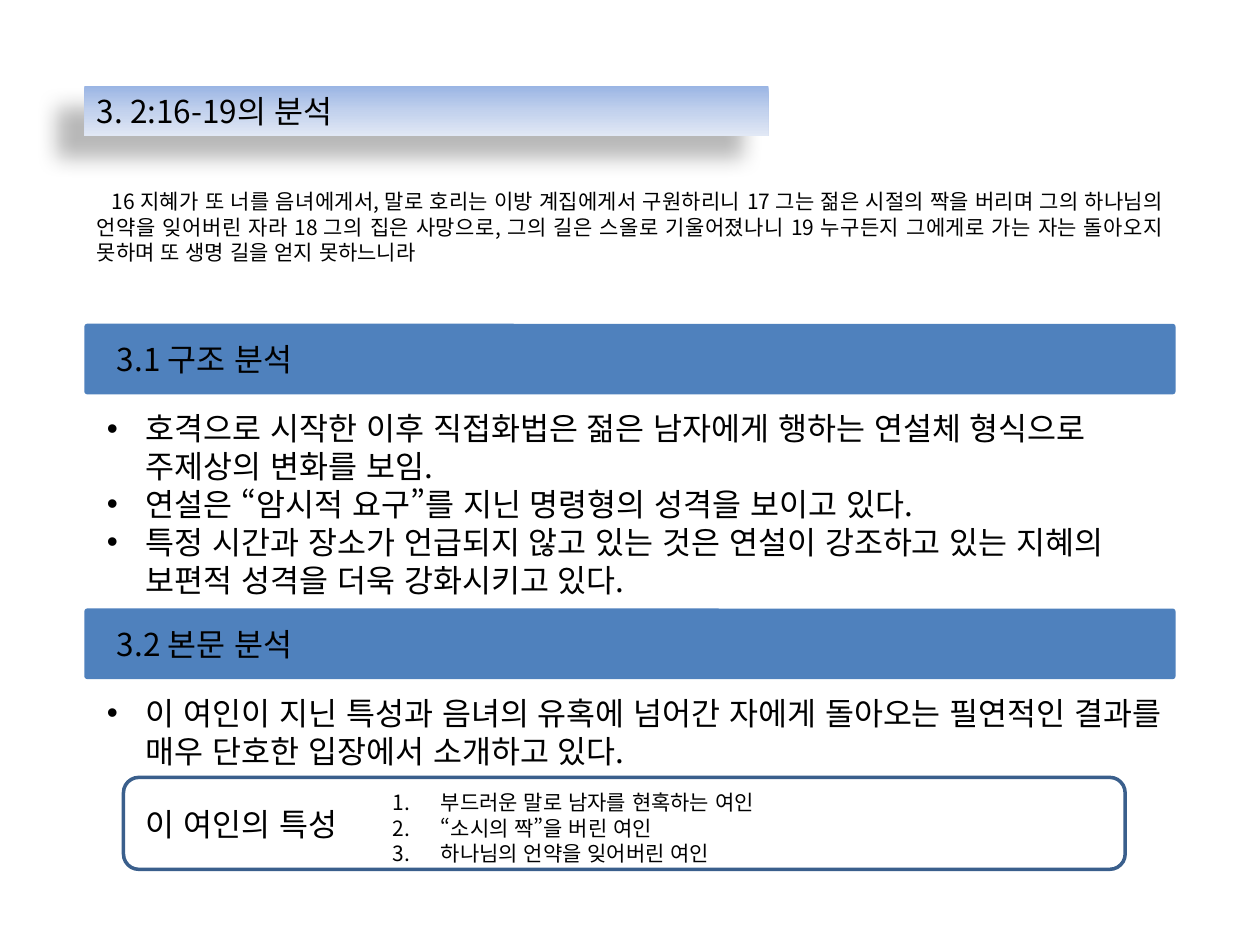
from lxml import etree
from pptx import Presentation
from pptx.dml.color import RGBColor
from pptx.enum.lang import MSO_LANGUAGE_ID
from pptx.enum.shapes import MSO_SHAPE
from pptx.enum.text import MSO_ANCHOR, MSO_AUTO_SIZE, PP_ALIGN
from pptx.oxml import parse_xml
from pptx.oxml.ns import nsdecls, qn
from pptx.util import Inches, Pt

RECT, ROUND = MSO_SHAPE.RECTANGLE, MSO_SHAPE.ROUNDED_RECTANGLE
LEFT, JUSTIFY = PP_ALIGN.LEFT, PP_ALIGN.JUSTIFY
KOREAN = MSO_LANGUAGE_ID.KOREAN
FONT = "Noto Sans CJK KR"
COLORS = {"text": "000000", "bar": "4F81BD", "frame": "3A5F8C"}
TITLE_STOPS = [(0, "9AB5E4"), (50, "C2D1ED"), (100, "E1E8F5")]
BODY, SMALL = 18, 12

TITLE = "3. 2:16-19의 분석"
VERSES = (
    "16 지혜가 또 너를 음녀에게서, 말로 호리는 이방 계집에게서 구원하리니 "
    "17 그는 젊은 시절의 짝을 버리며 그의 하나님의 언약을 잊어버린 자라 "
    "18 그의 집은 사망으로, 그의 길은 스올로 기울어졌나니 "
    "19 누구든지 그에게로 가는 자는 돌아오지 못하며 또 생명 길을 얻지 못하느니라"
)
# top of the bar, height of the text below it, heading, points
SECTIONS = [
    (2.57, 1.62, "3.1 구조 분석", [
        "호격으로 시작한 이후 직접화법은 젊은 남자에게 행하는 연설체 형식으로 주제상의 변화를 보임.",
        "연설은 “암시적 요구”를 지닌 명령형의 성격을 보이고 있다.",
        "특정 시간과 장소가 언급되지 않고 있는 것은 연설이 강조하고 있는 지혜의 보편적 성격을 더욱 강화시키고 있다.",
    ]),
    (4.83, 0.71, "3.2 본문 분석", [
        "이 여인이 지닌 특성과 음녀의 유혹에 넘어간 자에게 돌아오는 필연적인 결과를 매우 단호한 입장에서 소개하고 있다.",
    ]),
]
TRAITS_LABEL = "이 여인의 특성"
TRAITS = ["부드러운 말로 남자를 현혹하는 여인", "“소시의 짝”을 버린 여인", "하나님의 언약을 잊어버린 여인"]

SLIDE_W, SLIDE_H = 10, 7.5
MARGIN = 0.67
CONTENT_W = SLIDE_W - 2 * MARGIN
BAR_H, LINE_H = 0.56, 0.4
BULLET = ("buChar", {"char": "•"})
NUMBER = ("buAutoNum", {"type": "arabicPeriod"})


def write(sp, lines, size=BODY, align=LEFT, marker=None, hang=0.0):
    """Fill a shape with paragraphs, with hanging markers if asked for."""
    tf = sp.text_frame
    tf.word_wrap = True
    tf.auto_size = MSO_AUTO_SIZE.SHAPE_TO_FIT_TEXT
    tf.text = "\n".join(lines)
    for p in tf.paragraphs:
        p.alignment = align
        if marker:
            tag, attrs = marker
            pPr = p._p.get_or_add_pPr()
            pPr.set("marL", str(Inches(hang)))
            pPr.set("indent", str(-Inches(hang)))
            if tag == "buChar":
                etree.SubElement(pPr, qn("a:buFont"), typeface="Arial")
            etree.SubElement(pPr, qn("a:" + tag), **attrs)
        for r in p.runs:
            r.font.size = Pt(size)
            r.font.name = FONT
            r.font.language_id = KOREAN
            r.font.color.rgb = RGBColor.from_string(COLORS["text"])
            etree.SubElement(r._r.get_or_add_rPr(), qn("a:ea"), typeface=FONT)


def add_text(slide, box, lines, **style):
    sp = slide.shapes.add_textbox(*map(Inches, box))
    write(sp, lines, **style)
    return sp


def add_box(slide, kind, box, fill=None, line=None):
    sp = slide.shapes.add_shape(kind, *map(Inches, box))
    sp.shadow.inherit = False
    if fill:
        sp.fill.solid()
        sp.fill.fore_color.rgb = RGBColor.from_string(fill)
    else:
        sp.fill.background()
    if line:
        sp.line.color.rgb = RGBColor.from_string(line)
        sp.line.width = Pt(2)
    else:
        sp.line.fill.background()
    return sp


def add_title(slide):
    sp = add_box(slide, RECT, (MARGIN, 0.68, 5.43, LINE_H))
    stops = "".join(
        f'<a:gs pos="{pos * 1000}"><a:srgbClr val="{color}"/></a:gs>'
        for pos, color in TITLE_STOPS)
    gradient = parse_xml(
        f'<a:gradFill {nsdecls("a")} rotWithShape="1"><a:gsLst>{stops}</a:gsLst>'
        '<a:lin ang="5400000" scaled="0"/></a:gradFill>')
    spPr = sp._element.spPr
    spPr.replace(spPr.find(qn("a:noFill")), gradient)
    shadow = parse_xml(
        f'<a:outerShdw {nsdecls("a")} blurRad="{Pt(11.8)}" dist="{Pt(19.7)}" '
        f'dir="{141 * 60000}" algn="tl" rotWithShape="0"><a:srgbClr val="000000">'
        '<a:alpha val="28000"/></a:srgbClr></a:outerShdw>')
    spPr.find(qn("a:effectLst")).append(shadow)
    write(sp, [TITLE])
    sp.text_frame.vertical_anchor = MSO_ANCHOR.TOP


def add_verses(slide):
    sp = add_text(slide, (MARGIN, 1.36, CONTENT_W, 0.81), [VERSES], size=SMALL, align=JUSTIFY)
    sp.text_frame.margin_top = Inches(0.14)
    sp.text_frame.paragraphs[0]._p.get_or_add_pPr().set("indent", str(Inches(0.12)))


def add_section(slide, top, text_h, heading, points):
    bar = add_box(slide, ROUND, (MARGIN, top, CONTENT_W, BAR_H), fill=COLORS["bar"])
    bar.adjustments[0] = 0.04
    add_text(slide, (0.83, top + (BAR_H - LINE_H) / 2, 8.11, LINE_H), [heading])
    add_text(slide, (0.75, top + BAR_H + 0.07, 8.58, text_h), points,
             marker=BULLET, hang=0.31)


def add_traits(slide):
    add_text(slide, (1.06, 6.34, 1.89, LINE_H), [TRAITS_LABEL])
    add_box(slide, ROUND, (0.98, 6.17, 7.95, 0.73), line=COLORS["frame"])
    add_text(slide, (3.02, 6.22, 5.91, 0.71), TRAITS, size=SMALL, marker=NUMBER, hang=0.38)


def main():
    prs = Presentation()
    prs.slide_width, prs.slide_height = Inches(SLIDE_W), Inches(SLIDE_H)
    slide = prs.slides.add_slide(prs.slide_layouts[6])
    add_verses(slide)
    add_title(slide)
    for section in SECTIONS:
        add_section(slide, *section)
    add_traits(slide)
    prs.save("out.pptx")


if __name__ == "__main__":
    main()
